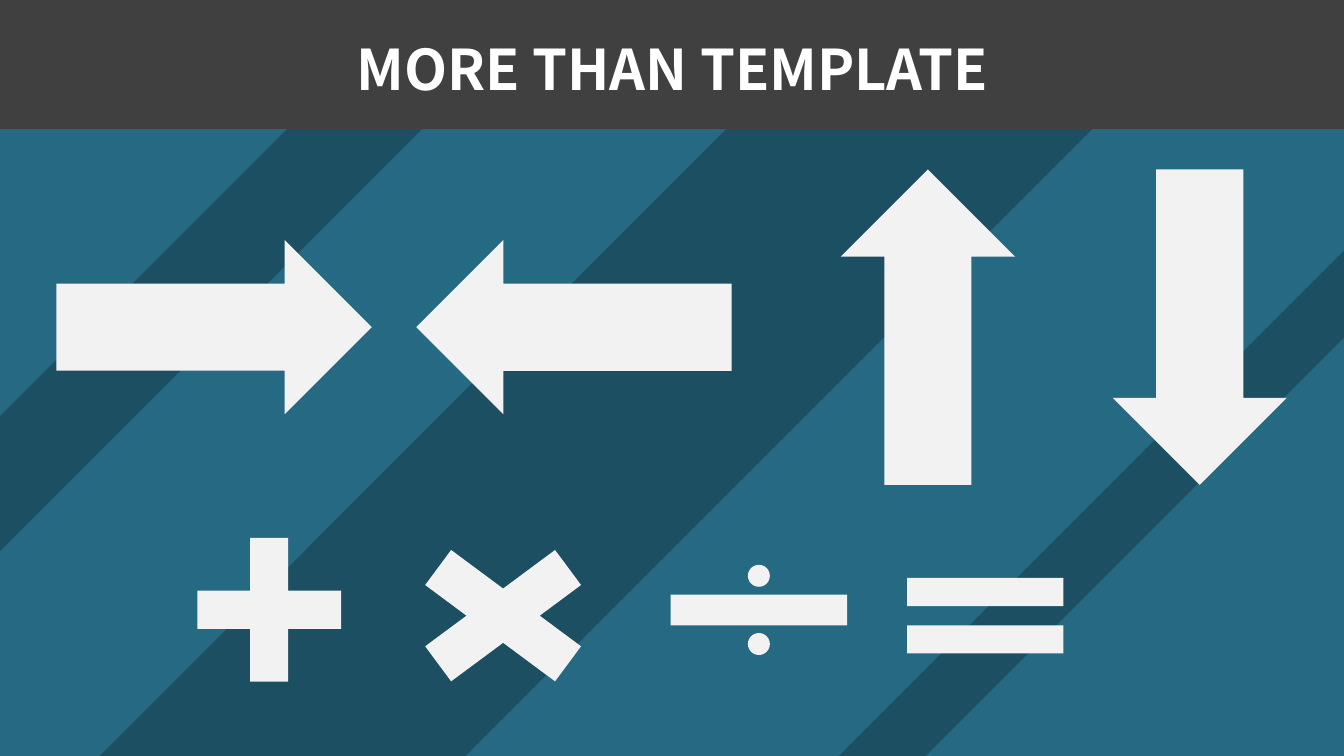
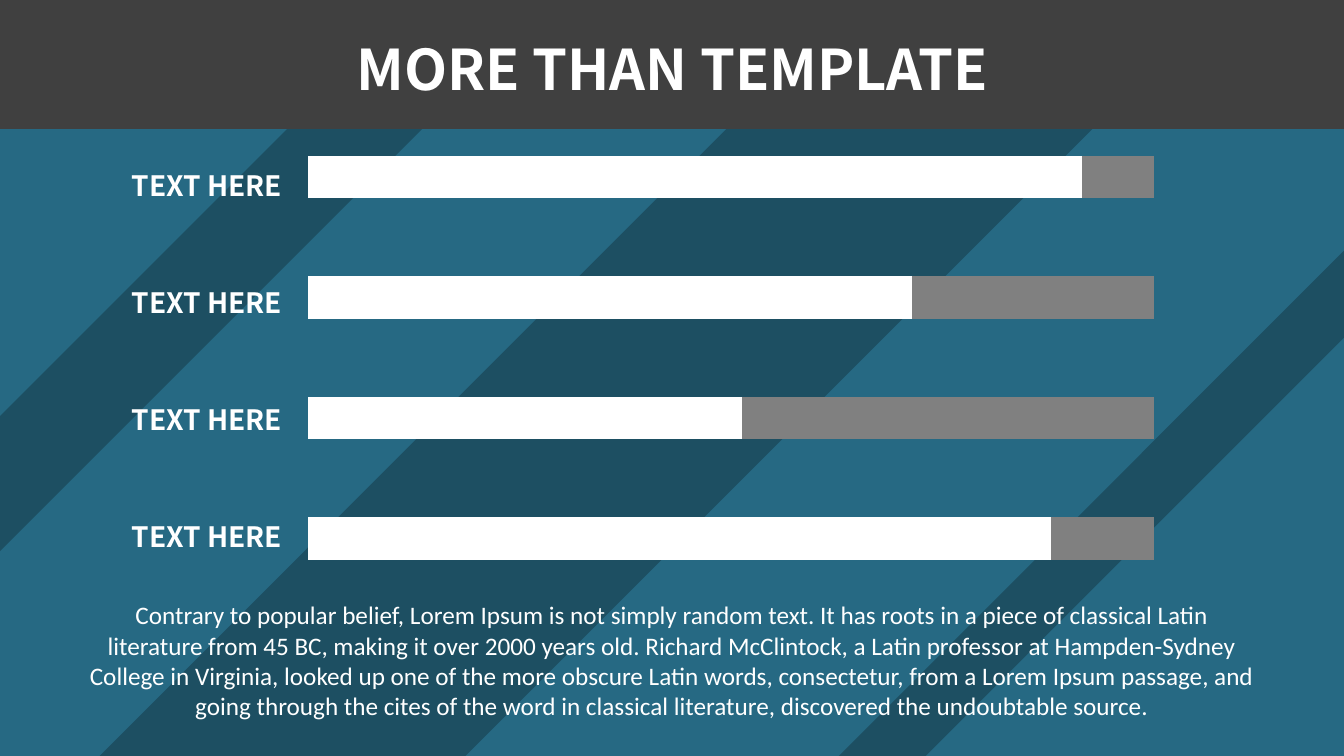
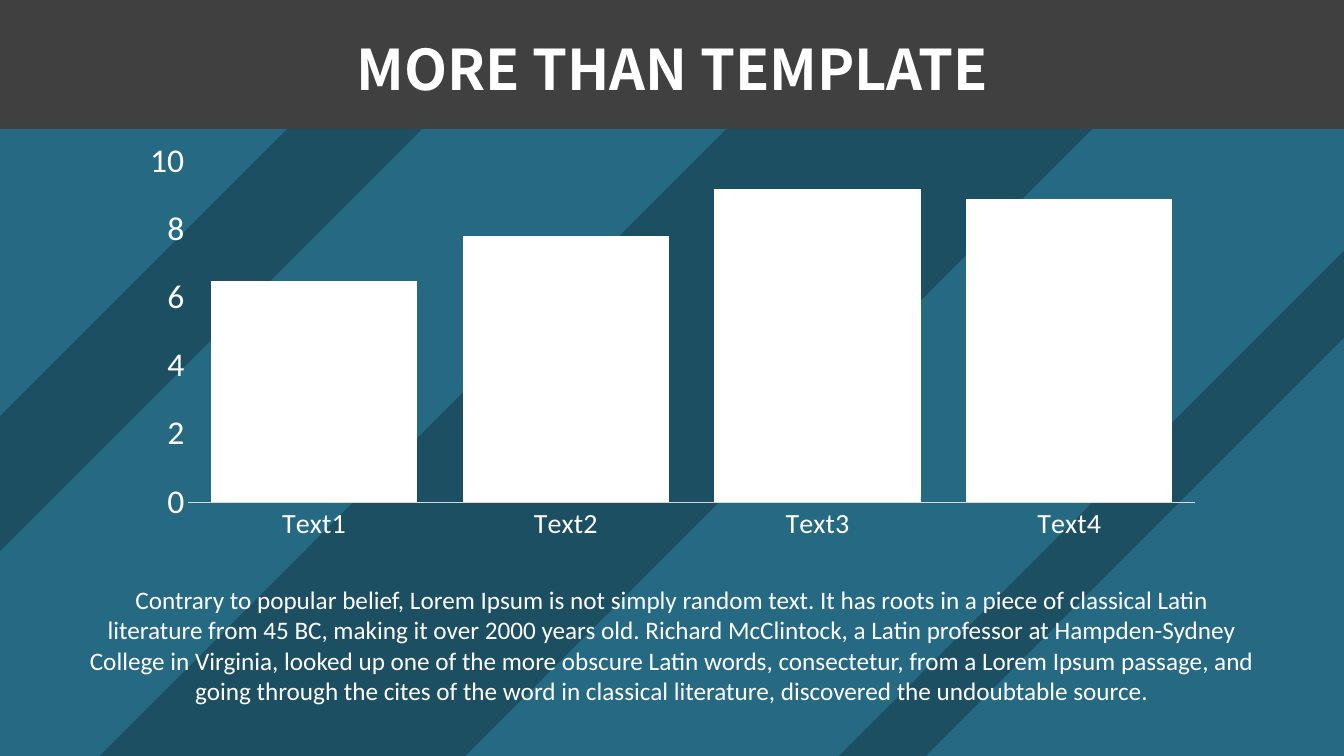
from dataclasses import dataclass

from lxml.etree import SubElement
from pptx import Presentation
from pptx.chart.data import CategoryChartData
from pptx.dml.color import RGBColor
from pptx.enum.chart import XL_CHART_TYPE as ChartType, XL_TICK_MARK as Tick
from pptx.enum.shapes import MSO_SHAPE as Preset
from pptx.enum.text import MSO_AUTO_SIZE as AutoSize, PP_ALIGN as Align
from pptx.oxml import parse_xml
from pptx.oxml.ns import nsdecls, qn
from pptx.util import Cm, Pt

WIDTH, HEIGHT = 33.87, 19.05
COLORS = {
    "field": "266983",
    "stripe": "1D4F62",
    "header": "404040",
    "symbol": "F2F2F2",
    "white": "FFFFFF",
    "track": "808080",
    "axis": "D9D9D9",
}
HEADING_FONT, BODY_FONT = "Noto Sans CJK SC", "Calibri"
TITLE = "MORE THAN TEMPLATE"
BODY = (
    "Contrary to popular belief, Lorem Ipsum is not simply random text. "
    "It has roots in a piece of classical Latin literature from 45 BC, making it "
    "over 2000 years old. Richard McClintock, a Latin professor at Hampden-Sydney "
    "College in Virginia, looked up one of the more obscure Latin words, "
    "consectetur, from a Lorem Ipsum passage, and going through the cites of the "
    "word in classical literature, discovered the undoubtable source."
)


@dataclass(frozen=True)
class Box:
    """A rectangle in centimetres."""
    left: float
    top: float
    width: float
    height: float

    def lengths(self):
        return Cm(self.left), Cm(self.top), Cm(self.width), Cm(self.height)


@dataclass(frozen=True)
class Symbol:
    preset: Preset
    box: Box
    adjustments: tuple = ()
    rotation: float = 0


@dataclass(frozen=True)
class Stripe:
    """A 45° band between the lines x + y = near and x + y = far."""
    near: float
    far: float


@dataclass(frozen=True)
class Plot:
    """The inner plot area as fractions of the chart."""
    x: float
    y: float
    w: float
    h: float


STRIPES = (Stripe(10.49, 13.89), Stripe(21.56, 30.78), Stripe(40.19, 42.38))

ARROW_TOP, ARROW_WIDTH, ARROW_HEIGHT = 6.05, 7.95, 4.39
ARROWS = tuple(
    Symbol(Preset.RIGHT_ARROW, Box(left, ARROW_TOP, ARROW_WIDTH, ARROW_HEIGHT),
           rotation=rotation)
    for left, rotation in ((1.42, 0), (10.49, 180), (19.41, 270), (26.26, 90))
)
OPERATORS = (
    Symbol(Preset.MATH_PLUS, Box(4.32, 12.9, 4.93, 4.93), (0.195,)),
    Symbol(Preset.MATH_MULTIPLY, Box(9.53, 13.18, 6.3, 4.67)),
    Symbol(Preset.MATH_DIVIDE, Box(16.1, 13.72, 6.05, 3.3), (0.235, 0.059, 0.084)),
    Symbol(Preset.MATH_EQUAL, Box(22.15, 13.46, 5.36, 4.11), (0.173, 0.118)),
)


def rgb(color: str) -> RGBColor:
    return RGBColor.from_string(COLORS[color])


def paint(shape, color: str) -> None:
    shape.fill.solid()
    shape.fill.fore_color.rgb = rgb(color)
    shape.line.fill.background()
    shape.shadow.inherit = False


def add_symbol(slide, symbol: Symbol, color: str) -> None:
    shape = slide.shapes.add_shape(symbol.preset, *symbol.box.lengths())
    shape.rotation = symbol.rotation
    for index, value in enumerate(symbol.adjustments):
        shape.adjustments[index] = value
    paint(shape, color)


def add_text(slide, text: str, box: Box, *, size: float, font: str = BODY_FONT,
             bold: bool = False, align: Align = Align.LEFT,
             color: str = "white") -> None:
    frame = slide.shapes.add_textbox(*box.lengths()).text_frame
    frame.word_wrap = True
    frame.auto_size = AutoSize.SHAPE_TO_FIT_TEXT
    paragraph = frame.paragraphs[0]
    paragraph.alignment = align
    run = paragraph.add_run()
    run.text = text
    run.font.size, run.font.name, run.font.bold = Pt(size), font, bold
    run.font.color.rgb = rgb(color)


def add_stripe(slide, stripe: Stripe) -> None:
    def upper_end(total: float):
        x = min(total, WIDTH)
        return Cm(x), Cm(total - x)

    def lower_end(total: float):
        y = min(total, HEIGHT)
        return Cm(total - y), Cm(y)

    builder = slide.shapes.build_freeform(*upper_end(stripe.near), scale=1.0)
    builder.add_line_segments(
        [upper_end(stripe.far), lower_end(stripe.far), lower_end(stripe.near)])
    paint(builder.convert_to_shape(), "stripe")


def add_themed_slide(deck):
    """Adds a slide with the striped field, the header band and the title."""
    slide = deck.slides.add_slide(deck.slide_layouts[6])
    add_symbol(slide, Symbol(Preset.RECTANGLE, Box(0, 0, WIDTH, HEIGHT)), "field")
    for stripe in STRIPES:
        add_stripe(slide, stripe)
    add_symbol(slide, Symbol(Preset.RECTANGLE, Box(0, 0, WIDTH, 3.25)), "header")
    add_text(slide, TITLE, Box(6.65, 0.74, 20.57, 1.96), size=40,
             font=HEADING_FONT, bold=True, align=Align.CENTER)
    return slide


def add_body(slide, top: float) -> None:
    add_text(slide, BODY, Box(2.01, top, 29.85, 3.33), size=18, align=Align.CENTER)


def set_plot_area(chart, plot: Plot) -> None:
    """Fixes the inner plot area and clears the chart's backgrounds."""
    area = chart.element.find(".//" + qn("c:plotArea"))
    for old in area.findall(qn("c:layout")):
        area.remove(old)
    layout = parse_xml(f"<c:layout {nsdecls('c')}/>")
    manual = SubElement(layout, qn("c:manualLayout"))
    settings = {"layoutTarget": "inner", "xMode": "edge", "yMode": "edge",
                "x": plot.x, "y": plot.y, "w": plot.w, "h": plot.h}
    for tag, value in settings.items():
        SubElement(manual, qn("c:" + tag)).set("val", str(value))
    area.insert(0, layout)
    no_fill = (f"<c:spPr {nsdecls('c', 'a')}><a:noFill/>"
               "<a:ln><a:noFill/></a:ln></c:spPr>")
    area.append(parse_xml(no_fill))
    chart.element.find(qn("c:chart")).addnext(parse_xml(no_fill))


def add_bars(slide, kind: ChartType, box: Box, plot: Plot, categories, values, *,
             color: str, gap: int, top_value: float, overlap: int = 0):
    data = CategoryChartData()
    data.categories = categories
    data.add_series("Series 1", values)
    chart = slide.shapes.add_chart(kind, *box.lengths(), data).chart
    chart.has_legend = chart.has_title = False
    chart.font.name, chart.font.size = BODY_FONT, Pt(10)
    bars = chart.plots[0]
    bars.gap_width, bars.overlap, bars.vary_by_categories = gap, overlap, False
    fill = bars.series[0].format.fill
    fill.solid()
    fill.fore_color.rgb = rgb(color)
    scale = chart.value_axis
    scale.minimum_scale, scale.maximum_scale = 0, top_value
    scale.has_major_gridlines = False
    set_plot_area(chart, plot)
    return chart


def style_axis(axis, size: float) -> None:
    axis.major_tick_mark = axis.minor_tick_mark = Tick.NONE
    font = axis.tick_labels.font
    font.size, font.name = Pt(size), BODY_FONT
    font.color.rgb = rgb("white")


def build_symbols(deck) -> None:
    slide = add_themed_slide(deck)
    for symbol in OPERATORS + ARROWS:
        add_symbol(slide, symbol, "symbol")


def build_progress(deck) -> None:
    slide = add_themed_slide(deck)
    # Grey tracks behind, white progress in front
    layers = (
        ("track", 26.57, (100, 100, 100, 100), Plot(0.017, 0.02, 0.802, 0.96)),
        ("white", 22.58, (96, 56, 78, 100), Plot(0.02, 0.02, 0.864, 0.96)),
    )
    for color, width, values, plot in layers:
        chart = add_bars(slide, ChartType.BAR_CLUSTERED, Box(7.32, 2.69, width, 12.65),
                         plot, ("1", "2", "3", "4"), values,
                         color=color, gap=182, top_value=100)
        chart.category_axis.visible = chart.value_axis.visible = False
    # Row labels
    for row in range(4):
        add_text(slide, "TEXT HERE", Box(3.07, 4.11 + 2.95 * row, 4.6, 1.12),
                 size=20, font=HEADING_FONT, bold=True)
    add_body(slide, 14.99)


def build_columns(deck) -> None:
    slide = add_themed_slide(deck)
    chart = add_bars(slide, ChartType.COLUMN_CLUSTERED, Box(2.92, 3.56, 27.23, 11.48),
                     Plot(0.067, 0.033, 0.932, 0.757),
                     ("Text1", "Text2", "Text3", "Text4"), (6.5, 7.8, 9.2, 8.9),
                     color="white", gap=22, overlap=-3, top_value=10)
    style_axis(chart.category_axis, 20)
    style_axis(chart.value_axis, 24)
    chart.value_axis.major_unit = 2
    chart.value_axis.format.line.fill.background()
    baseline = chart.category_axis.format.line
    baseline.color.rgb, baseline.width = rgb("axis"), Pt(0.75)
    add_body(slide, 14.6)


def main() -> None:
    deck = Presentation()
    deck.slide_width, deck.slide_height = Cm(WIDTH), Cm(HEIGHT)
    for build in (build_symbols, build_progress, build_columns):
        build(deck)
    deck.save("out.pptx")


if __name__ == "__main__":
    main()
